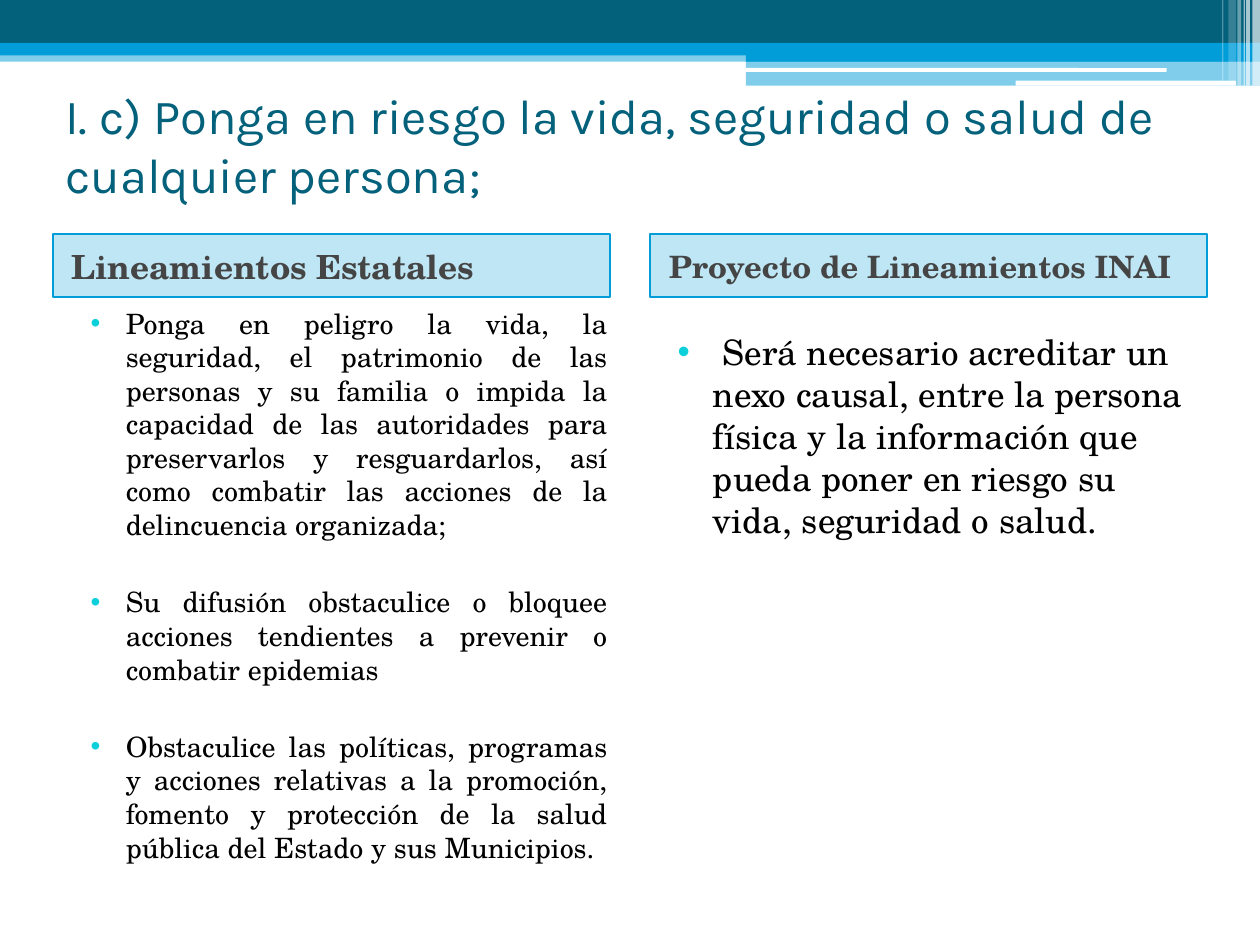
import pptx
import pptx.dml.color
import pptx.enum.shapes
import pptx.enum.text
import pptx.oxml.ns
import pptx.util
from lxml import etree
from pptx.util import Inches

ALIGN = pptx.enum.text.PP_ALIGN
ANCHOR = pptx.enum.text.MSO_ANCHOR
SHAPE = pptx.enum.shapes.MSO_SHAPE


class Theme:
    dark, blue, white = "04617B", "009DD9", "FFFFFF"
    heading, body, bullet = "454545", "000000", "0BD0D9"
    title_font, text_font = "Karla", "TeX Gyre Schola"
    title_size, left_head, right_head = 28, 19, 17.6
    left_body, right_body = 16, 20


def rgb(value):
    return pptx.dml.color.RGBColor.from_string(value)


def add_xml(parent, tag, **attrs):
    return etree.SubElement(parent, pptx.oxml.ns.qn(tag), **attrs)


def write(p, text, *, size, color, font=Theme.text_font, bold=False,
          align=ALIGN.LEFT, before=0, margin=0, indent=0, bullet=None):
    """Fill a paragraph with one formatted run."""
    p.alignment = align
    p.space_before = pptx.util.Pt(before)
    pPr = p._p.get_or_add_pPr()
    pPr.set("marL", str(Inches(margin)))
    pPr.set("indent", str(Inches(indent)))
    if bullet:
        add_xml(add_xml(pPr, "a:buClr"), "a:srgbClr", val=bullet)
        add_xml(pPr, "a:buFont", typeface="Arial")
        add_xml(pPr, "a:buChar", char="•")
    r = p.add_run()
    r.text = text
    r.font.name, r.font.size, r.font.bold = font, pptx.util.Pt(size), bold
    r.font.color.rgb = rgb(color)


class Builder:
    def __init__(self, prs, theme):
        self.theme = theme
        self.s = prs.slides.add_slide(prs.slide_layouts[6])

    def bar(self, x, y, w, h, color, alpha=100, kind=SHAPE.RECTANGLE, line=None):
        sp = self.s.shapes.add_shape(kind, *map(Inches, (x, y, w, h)))
        sp.shadow.inherit = False
        sp.fill.solid()
        sp.fill.fore_color.rgb = rgb(color)
        if alpha < 100:
            clr = sp.fill._xPr.find(".//" + pptx.oxml.ns.qn("a:srgbClr"))
            add_xml(clr, "a:alpha", val=str(alpha * 1000))
        if line:
            sp.line.color.rgb = rgb(line)
            sp.line.width = pptx.util.Pt(1)
        else:
            sp.line.fill.background()
        return sp

    def text(self, x, y, w, h, text, anchor=ANCHOR.TOP, **fmt):
        tf = self.s.shapes.add_textbox(*map(Inches, (x, y, w, h))).text_frame
        tf.word_wrap = True
        tf.vertical_anchor = anchor
        write(tf.paragraphs[0], text, **fmt)

    def heading(self, x, text, size):
        t = self.theme
        sp = self.bar(x, 1.86, 4.42, 0.5, t.blue, 25, line=t.blue)
        tf = sp.text_frame
        tf.word_wrap = True
        tf.vertical_anchor = ANCHOR.MIDDLE
        write(tf.paragraphs[0], text, size=size, color=t.heading, bold=True,
              before=3, margin=0.05)

    def bullets(self, x, y, h, items, size, align=ALIGN.LEFT, gap=25):
        t = self.theme
        tf = self.s.shapes.add_textbox(*map(Inches, (x, y, 4.42, h))).text_frame
        tf.word_wrap = True
        for i, item in enumerate(items):
            p = tf.add_paragraph() if i else tf.paragraphs[0]
            write(p, item, size=size, color=t.body, align=align,
                  before=gap if i else 3, margin=0.4, indent=-0.28,
                  bullet=t.bullet)

    def banner(self):
        t = self.theme
        for x, y, w, h, color, alpha in (
                (0, 0.4, 10, 0.09, t.blue, 50),
                (0, 0, 10, 0.34, t.dark, 100),
                (0, 0.34, 10, 0.1, t.blue, 100),
                (5.92, 0.39, 4.08, 0.1, t.blue, 100),
                (5.92, 0.48, 4.08, 0.2, t.blue, 50)):
            self.bar(x, y, w, h, color, alpha)
        for x, y, w, h in ((5.91, 0.54, 3.35, 0.03), (8.06, 0.64, 1.75, 0.04)):
            self.bar(x, y, w, h, t.white, kind=SHAPE.ROUNDED_RECTANGLE)
        for x, w, h, alpha in (
                (9.94, 0.06, 0.68, 65), (9.89, 0.03, 0.68, 65),
                (9.87, 0.01, 0.68, 60), (9.82, 0.03, 0.68, 40),
                (9.75, 0.06, 0.64, 20), (9.7, 0.01, 0.64, 30)):
            self.bar(x, 0, w, h, t.white, alpha)


def main():
    prs = pptx.Presentation()
    prs.slide_width, prs.slide_height = Inches(10), Inches(7.5)
    t = Theme()
    b = Builder(prs, t)
    b.banner()
    b.text(0.42, 0.76, 9.17, 0.77,
           "I. c) Ponga en riesgo la vida, seguridad o salud de cualquier persona;",
           anchor=ANCHOR.MIDDLE, size=t.title_size, color=t.dark,
           font=t.title_font)
    b.heading(0.42, "Lineamientos Estatales", t.left_head)
    b.heading(5.16, "Proyecto de Lineamientos INAI", t.right_head)
    b.bullets(0.5, 2.38, 4.92, (
        "Ponga en peligro la vida, la seguridad, el patrimonio de las personas "
        "y su familia o impida la capacidad de las autoridades para "
        "preservarlos y resguardarlos, así como combatir las acciones de la "
        "delincuencia organizada;",
        "Su difusión obstaculice o bloquee acciones tendientes a prevenir o "
        "combatir epidemias",
        "Obstaculice las políticas, programas y acciones relativas a la "
        "promoción, fomento y protección de la salud pública del Estado y sus "
        "Municipios."), t.left_body, ALIGN.JUSTIFY)
    b.bullets(5.16, 2.57, 2.36, (
        " Será necesario acreditar un nexo causal, entre la persona física y "
        "la información que pueda poner en riesgo su vida, seguridad o "
        "salud.",), t.right_body)
    prs.save("out.pptx")


if __name__ == "__main__":
    main()
